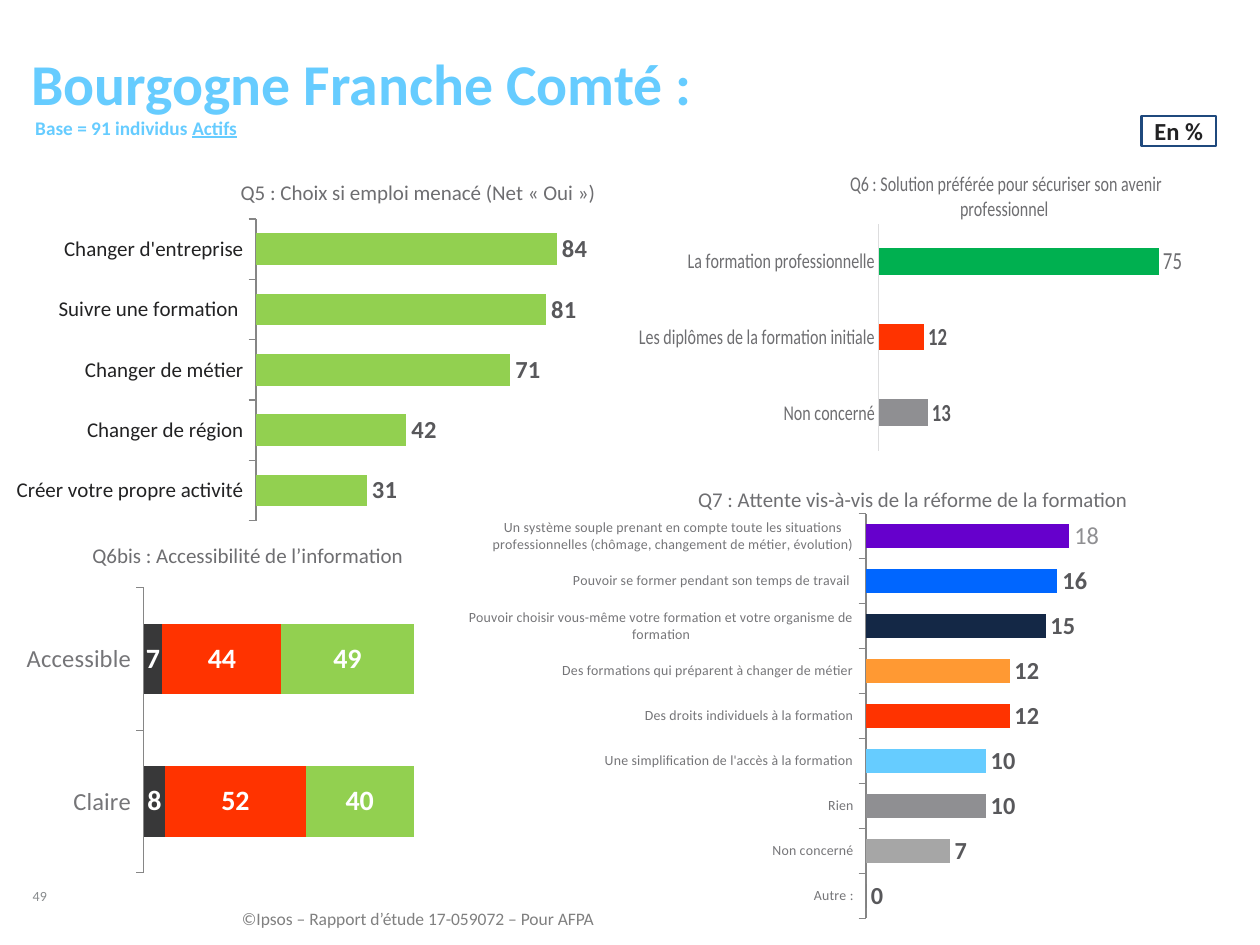
from lxml import etree
from pptx import Presentation
from pptx import util as u
from pptx.chart import data as cd
from pptx.dml.color import RGBColor
from pptx.enum import chart as ec, shapes, text
from pptx.oxml import ns

LIME, RED, GREY, DARK = "92D050", "FF3300", "8F8F92", "58585B"
SOFT, SKY, INK = "6E6E71", "66CCFF", "222223"


def rgb(code):
    return RGBColor.from_string(code)


class Deck:
    face = "Calibri"

    def __init__(self):
        self.prs = Presentation()
        self.prs.slide_width = u.Inches(10)
        self.prs.slide_height = u.Inches(7.5)
        self.page = self.prs.slides.add_slide(self.prs.slide_layouts[5])

    def style(self, font, size, color, **more):
        for key, val in dict(name=self.face, size=u.Pt(size), **more).items():
            setattr(font, key, val)
        font.color.rgb = rgb(color)

    def place(self, shape, box):
        for key, val in zip(("left", "top", "width", "height"), box):
            setattr(shape, key, u.Inches(val))

    def words(self, shape, runs, size, color, align=text.PP_ALIGN.LEFT,
              anchor=text.MSO_ANCHOR.TOP, wrap=True, **more):
        frame = shape.text_frame
        form = dict(margin_left=0, margin_top=0, margin_right=0,
                    margin_bottom=0, word_wrap=wrap, vertical_anchor=anchor,
                    auto_size=text.MSO_AUTO_SIZE.NONE)
        for key, val in form.items():
            setattr(frame, key, val)
        para = frame.paragraphs[0]
        para.alignment = align
        for part, extra in runs:
            run = para.add_run()
            run.text = part
            self.style(run.font, size, color, **more, **extra)
        return para

    def title(self, line, box, size, color):
        shape = self.page.shapes.title
        self.place(shape, box)
        para = self.words(shape, [(line, {})], size, color, bold=True)
        para.line_spacing = 0.9

    def label(self, runs, box, size, color, **more):
        shape = self.page.shapes.add_textbox(*map(u.Inches, box))
        self.words(shape, runs, size, color, **more)

    def badge(self, line, box):
        shape = self.page.shapes.add_shape(
            shapes.MSO_SHAPE.RECTANGLE, *map(u.Inches, box))
        shape.shadow.inherit = False
        shape.fill.background()
        shape.line.color.rgb = rgb("1F497D")
        shape.line.width = u.Pt(1.5)
        self.words(shape, [(line, {})], 14, INK, text.PP_ALIGN.CENTER,
                   text.MSO_ANCHOR.MIDDLE, bold=True)

    def layout(self, host, index, spots, inner=False):
        for old in host.findall(ns.qn("c:layout")):
            host.remove(old)
        node = etree.Element(ns.qn("c:layout"))
        man = etree.SubElement(node, ns.qn("c:manualLayout"))
        vals = [("layoutTarget", "inner")] if inner else []
        vals += [("xMode", "edge"), ("yMode", "edge")]
        vals += zip("xywh", spots)
        for tag, val in vals:
            etree.SubElement(man, ns.qn("c:" + tag)).set("val", str(val))
        host.insert(index, node)

    def bars(self, box, head, cats, rows, plot, gap, top, axis,
             spot=None, kind=ec.XL_CHART_TYPE.BAR_CLUSTERED, tick=True,
             line="868686", mark=None, dots=None, notes=None):
        """rows: (values, colour); axis and mark: (size, colour)."""
        info = cd.CategoryChartData()
        info.categories = cats
        for num, (vals, _) in enumerate(rows, 1):
            info.add_series(f"Series {num}", vals)
        chart = self.page.shapes.add_chart(
            kind, *map(u.Inches, box), info).chart
        self.style(chart.font, 12, INK)
        chart.has_legend = False

        # Heading and plot area
        chart.has_title = True
        frame = chart.chart_title.text_frame
        frame.text = head
        self.style(frame.paragraphs[0].runs[0].font, 12, SOFT, bold=False)
        root = chart._chartSpace
        if spot:
            self.layout(root.find(".//" + ns.qn("c:title")), 1, spot)
        self.layout(root.find(".//" + ns.qn("c:plotArea")), 0, plot, True)

        # Axes
        val = chart.value_axis
        form = dict(visible=False, has_major_gridlines=False,
                    minimum_scale=0, maximum_scale=top)
        for key, item in form.items():
            setattr(val, key, item)
        cat = chart.category_axis
        marks = ec.XL_TICK_MARK
        cat.major_tick_mark = marks.OUTSIDE if tick else marks.NONE
        cat.format.line.color.rgb = rgb(line)
        cat.format.line.width = u.Pt(0.75)
        self.style(cat.tick_labels.font, *axis)

        # Bars and their values
        body = chart.plots[0]
        body.gap_width = gap
        body.vary_by_categories = False
        stack = kind != ec.XL_CHART_TYPE.BAR_CLUSTERED
        if stack:
            body.overlap = 100
        spots = ec.XL_LABEL_POSITION
        side = spots.CENTER if stack else spots.OUTSIDE_END
        for ser, (_, color) in zip(body.series, rows):
            ser.format.fill.solid()
            ser.format.fill.fore_color.rgb = rgb(color)
            tags = ser.data_labels
            tags.show_value = True
            tags.position = side
            self.style(tags.font, *mark, bold=True)
            for num, tint in (dots or {}).items():
                fill = ser.points[num].format.fill
                fill.solid()
                fill.fore_color.rgb = rgb(tint)
            for num, (note, tint) in (notes or {}).items():
                tag = ser.points[num].data_label
                tag.text_frame.text = note
                run = tag.text_frame.paragraphs[0].runs[0]
                self.style(run.font, mark[0], tint, bold=False)
                tag.position = side


def main():
    deck = Deck()

    # Heading
    deck.title("Bourgogne Franche Comté :", (0.25, 0.44, 9.46, 0.5), 33, SKY)
    deck.label([("Base = 91 individus ", {}), ("Actifs", {"underline": True})],
               (0.28, 0.92, 2.44, 0.37), 11, SKY, bold=True)

    # Q6: preferred solution
    deck.bars((5.07, 1.21, 4.72, 2.69),
              "Q6 : Solution préférée pour sécuriser son avenir professionnel ",
              ["Non concerné", "Les diplômes de la formation initiale",
               "La formation professionnelle"],
              [((13, 12, 74), "F1BE48")], (0.22, 0.21, 0.75, 0.67),
              182, 90, (12, SOFT), tick=False, line="DDDDDE",
              mark=(14, DARK), dots={0: GREY, 1: RED, 2: "00B050"},
              notes={2: ("75", SOFT)})

    # Q6bis: access to information
    deck.bars((0, 4.2, 3.35, 3.1), "Q6bis : Accessibilité de l’information",
              ["Claire", "Accessible"],
              [((8, 7), "383839"), ((52, 44), RED), ((40, 49), LIME)],
              (0.34, 0.15, 0.64, 0.73), 102, 1, (14, "757578"),
              spot=(0.21, 0.02), mark=(16, "FFFFFF"),
              kind=ec.XL_CHART_TYPE.BAR_STACKED_100)

    # Q7: hopes for the reform
    tints = [DARK, "A6A6A6", GREY, SKY, RED, "FF9933", "142846", "0066FF",
             "6600CC"]
    deck.bars((3.72, 3.75, 6.25, 3.65),
              "Q7 : Attente vis-à-vis de la réforme de la formation",
              ["Autre :", "Non concerné", "Rien",
               "Une simplification de l'accès à la formation",
               "Des droits individuels à la formation",
               "Des formations qui préparent à changer de métier",
               "Pouvoir choisir vous-même votre formation et votre organisme "
               "de formation",
               "Pouvoir se former pendant son temps de travail ",
               "Un système souple prenant en compte toute les situations "
               "professionnelles (chômage, changement de métier, évolution)"],
              [((0, 7, 10, 10, 12, 12, 15, 16, 17), "A6A6A6")],
              (0.5, 0.09, 0.46, 0.88), 90, 30, (8, "757578"),
              spot=(0.28, 0.02), mark=(14, DARK),
              dots=dict(enumerate(tints)), notes={8: ("18", GREY)})

    # Q5: choices if the job is at risk
    deck.bars((0, 1.33, 5.08, 2.92), "Q5 : Choix si emploi menacé (Net « Oui »)",
              ["Créer votre propre activité", "Changer de région",
               "Changer de métier", "Suivre une formation ",
               "Changer d'entreprise"],
              [((31, 42, 71, 81, 84), LIME)], (0.4, 0.14, 0.56, 0.82),
              90, 100, (12, INK), spot=(0.37, 0.02), mark=(14, DARK))

    # Unit, footer and page number
    deck.badge("En %", (9.06, 0.92, 0.59, 0.24))
    deck.label([("©Ipsos – Rapport d’étude 17-059072 – Pour AFPA", {})],
               (1.92, 7.21, 5.14, 0.65), 10, "808080")
    deck.label([("49", {})], (0.26, 6.83, 0.34, 0.35), 8, "888B8D",
               anchor=text.MSO_ANCHOR.BOTTOM, wrap=False)

    deck.prs.save("out.pptx")


if __name__ == "__main__":
    main()
